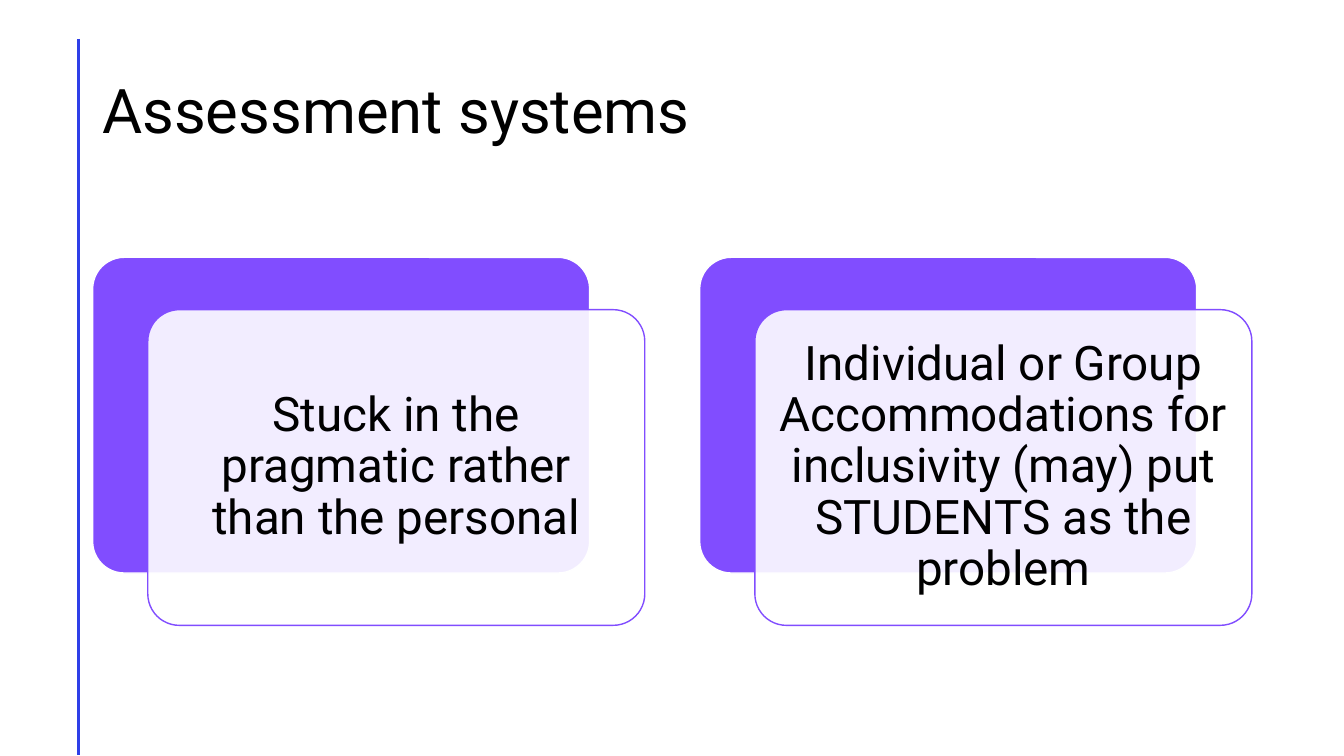
from lxml.etree import SubElement
from pptx import Presentation
from pptx.dml.color import RGBColor
from pptx.enum.shapes import MSO_CONNECTOR as CONNECTOR, MSO_SHAPE as SHAPE
from pptx.enum.text import MSO_ANCHOR as ANCHOR, PP_ALIGN as ALIGN
from pptx.oxml.ns import qn
from pptx.util import Pt

FONT = "Roboto"
BLACK, WHITE, PURPLE, BLUE = "000000", "FFFFFF", "814DFF", "2F3FE8"

CARD_WIDTH, CARD_HEIGHT = 355, 225.5
CARD_LEFT, CARD_TOP, CARD_STEP = 66.2, 183.8, 433.6
FRONT_SHIFT_X, FRONT_SHIFT_Y = 39.4, 37.4
TEXT_MARGIN = 6.6

STATEMENTS = [
    "Stuck in the pragmatic rather than the personal",
    "Individual or Group Accommodations for inclusivity (may) put STUDENTS as the problem",
]


def color(hex_string):
    return RGBColor.from_string(hex_string)


def add_rule(page, x, top, bottom):
    rule = page.shapes.add_connector(CONNECTOR.STRAIGHT, Pt(x), Pt(top), Pt(x), Pt(bottom))
    rule.line.color.rgb = color(BLUE)
    rule.line.width = Pt(2)
    SubElement(rule._element.spPr, qn("a:effectLst"))


def add_panel(page, left, top, fill, outline, opacity=100):
    panel = page.shapes.add_shape(
        SHAPE.ROUNDED_RECTANGLE, Pt(left), Pt(top), Pt(CARD_WIDTH), Pt(CARD_HEIGHT))
    panel.adjustments[0] = 0.1
    panel.shadow.inherit = False
    panel.fill.solid()
    panel.fill.fore_color.rgb = color(fill)
    if opacity < 100:
        fill_color = panel._element.spPr.find(qn("a:solidFill"))[0]
        SubElement(fill_color, qn("a:alpha"), val=str(opacity * 1000))
    panel.line.color.rgb = color(outline)
    panel.line.width = Pt(1)


def add_text(page, left, top, width, height, text, size, align, inset_x, inset_y):
    box = page.shapes.add_textbox(Pt(left), Pt(top), Pt(width), Pt(height))
    frame = box.text_frame
    frame.word_wrap = True
    frame.vertical_anchor = ANCHOR.MIDDLE
    frame.margin_left = frame.margin_right = Pt(inset_x)
    frame.margin_top = frame.margin_bottom = Pt(inset_y)
    frame.text = text
    para = frame.paragraphs[0]
    para.alignment = align
    para.line_spacing = 0.9
    font = para.runs[0].font
    font.name, font.size = FONT, Pt(size)
    font.color.rgb = color(BLACK)


def add_card(page, left, top, text):
    front_left, front_top = left + FRONT_SHIFT_X, top + FRONT_SHIFT_Y
    add_panel(page, left, top, PURPLE, WHITE)
    add_panel(page, front_left, front_top, WHITE, PURPLE, opacity=90)
    add_text(page, front_left + TEXT_MARGIN, front_top + TEXT_MARGIN,
             CARD_WIDTH - 2 * TEXT_MARGIN, CARD_HEIGHT - 2 * TEXT_MARGIN,
             text, 34, ALIGN.CENTER, 10.2, 10.2)


def main():
    deck = Presentation()
    deck.slide_width, deck.slide_height = Pt(960), Pt(540)
    page = deck.slides.add_slide(deck.slide_layouts[6])

    # Margin rule and title
    add_rule(page, 56.2, 27.8, 539.5)
    add_text(page, 66, 28.8, 828, 104.4, "Assessment systems", 44, ALIGN.LEFT, 7.2, 3.6)

    # Layered cards
    for index, statement in enumerate(STATEMENTS):
        add_card(page, CARD_LEFT + index * CARD_STEP, CARD_TOP, statement)

    deck.save("out.pptx")


if __name__ == "__main__":
    main()
